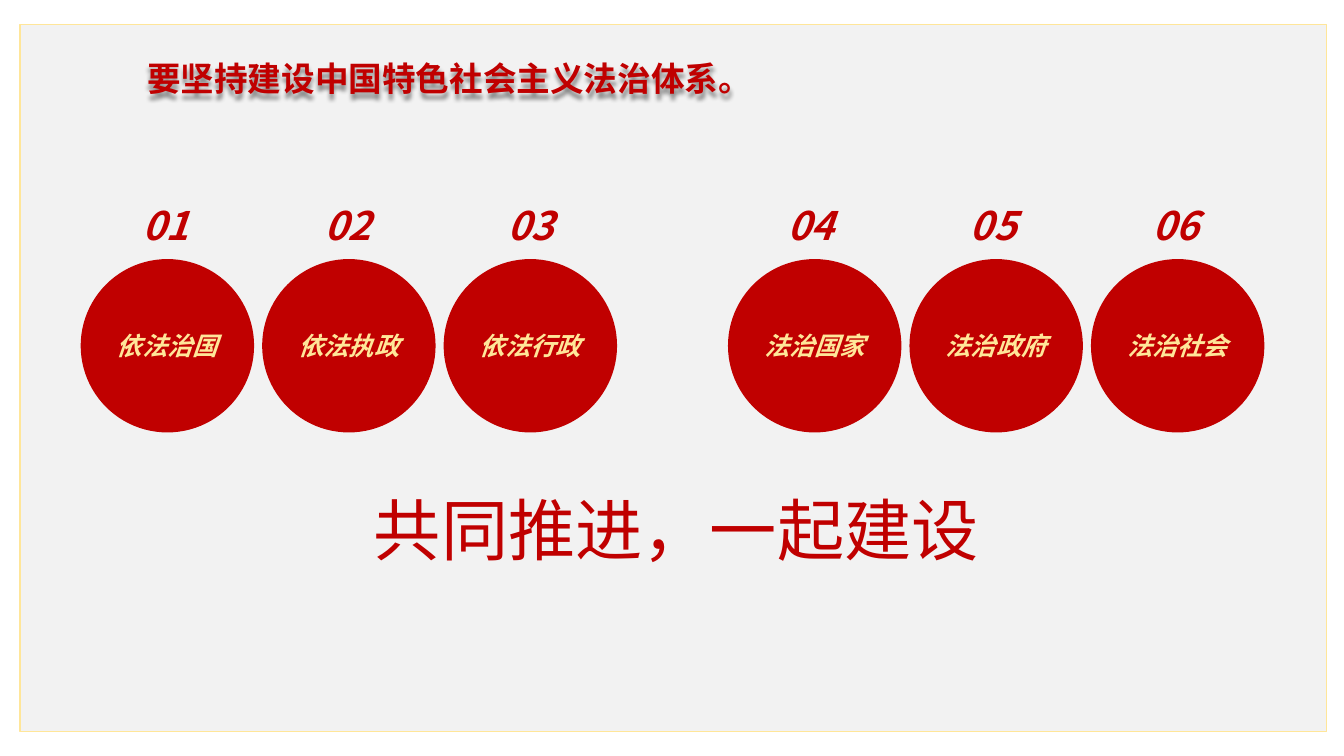
import pptx
import pptx.dml.color
import pptx.enum.lang
import pptx.enum.shapes
import pptx.enum.text
import pptx.oxml
import pptx.oxml.ns
import pptx.util

PX = 9144  # 100 px to the inch
RED = pptx.dml.color.RGBColor(0xC0, 0x00, 0x00)
GOLD = pptx.dml.color.RGBColor(0xFF, 0xE6, 0x99)
GREY = pptx.dml.color.RGBColor(0xF2, 0xF2, 0xF2)
SANS = "Noto Sans CJK SC"
KIND = pptx.enum.shapes.MSO_SHAPE
LEFT = pptx.enum.text.PP_ALIGN.LEFT
MID = pptx.enum.text.PP_ALIGN.CENTER
NS = pptx.oxml.ns.nsdecls("a")

deck = pptx.Presentation()
deck.slide_width, deck.slide_height = 1333 * PX, 750 * PX
slide = deck.slides.add_slide(deck.slide_layouts[6])


def shape(kind, x, y, w, h, fill):
    item = slide.shapes.add_shape(kind, x * PX, y * PX, w * PX, h * PX)
    item.shadow.inherit = False
    item.fill.solid()
    item.fill.fore_color.rgb = fill
    item.line.fill.background()
    return item


def write(item, text, size, color, align=MID, face=SANS, bold=True, slant=False):
    item.text_frame.word_wrap = True
    para = item.text_frame.paragraphs[0]
    para.text = text
    para.alignment = align
    font = para.font
    font.size = pptx.util.Pt(size)
    font.name = face
    font.bold, font.italic = bold, slant
    font.color.rgb = color
    font.language_id = pptx.enum.lang.MSO_LANGUAGE_ID.SIMPLIFIED_CHINESE
    # East Asian text takes its face from a:ea
    latin = font._element.find(pptx.oxml.ns.qn("a:latin"))
    latin.addnext(pptx.oxml.parse_xml(f'<a:ea {NS} typeface="{face}"/>'))


panel = shape(KIND.RECTANGLE, 20, 24, 1296, 702, GREY)
panel.line.color.rgb = GOLD
panel.line.width = pptx.util.Pt(1)

title = slide.shapes.add_textbox(136 * PX, 53 * PX, 618 * PX, 50 * PX)
write(title, "要坚持建设中国特色社会主义法治体系。", 24, RED, LEFT)
title._element.spPr.append(pptx.oxml.parse_xml(
    f'<a:effectLst {NS}><a:outerShdw blurRad="38100" dist="38100" dir="5400000" algn="t">'
    '<a:srgbClr val="000000"><a:alpha val="43000"/></a:srgbClr>'
    '</a:outerShdw></a:effectLst>'))

groups = [
    (80, 114, ["依法治国", "依法执政", "依法行政"]),
    (722, 754, ["法治国家", "法治政府", "法治社会"]),
]
count = 0
for left, head, names in groups:
    for i, name in enumerate(names):
        count += 1
        disc = shape(KIND.OVAL, left + 180 * i, 257, 172, 172, RED)
        disc.text_frame.vertical_anchor = pptx.enum.text.MSO_ANCHOR.MIDDLE
        write(disc, name, 18, GOLD, slant=True)
        label = slide.shapes.add_textbox((head + 181 * i) * PX, 195 * PX, 100 * PX, 57 * PX)
        write(label, f"{count:02}", 28, RED, slant=True)

motto = slide.shapes.add_textbox(361 * PX, 480 * PX, 626 * PX, 91 * PX)
write(motto, "共同推进，一起建设", 48, RED, LEFT, "Arial", bold=False)
motto.text_frame.word_wrap = False

deck.save("out.pptx")
